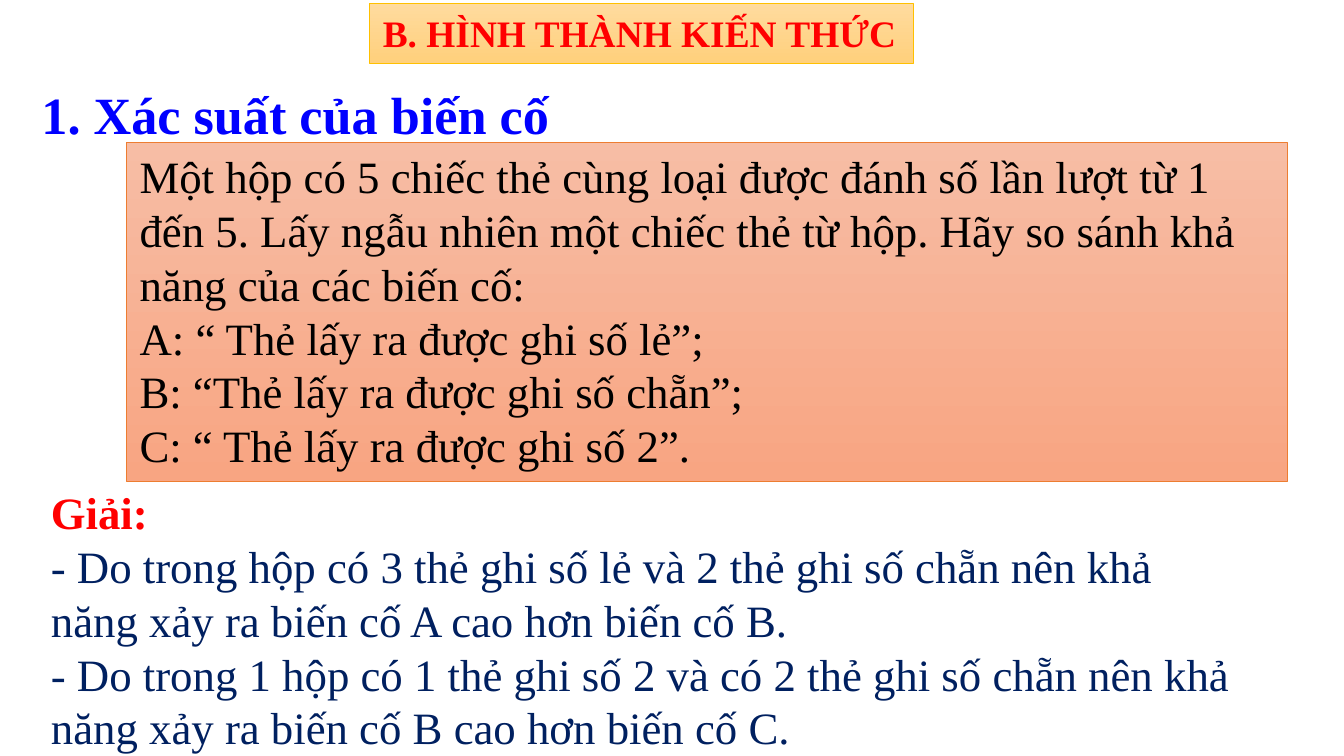
from dataclasses import dataclass
from typing import Any, Optional

from pptx import Presentation
from pptx.dml import color
from pptx.enum import shapes, text
from pptx import util as u

RED = color.RGBColor(0xFF, 0x00, 0x00)
BLUE = color.RGBColor(0x00, 0x00, 0xFF)
NAVY = color.RGBColor(0x00, 0x20, 0x60)
BLACK = color.RGBColor(0x00, 0x00, 0x00)
GOLD = color.RGBColor(0xFF, 0xC0, 0x00)
GOLD_TOP = color.RGBColor(0xFF, 0xDB, 0x9E)
GOLD_BOTTOM = color.RGBColor(0xFF, 0xD0, 0x7C)
ORANGE = color.RGBColor(0xED, 0x7D, 0x31)
ORANGE_TOP = color.RGBColor(0xF7, 0xBD, 0xA5)
ORANGE_BOTTOM = color.RGBColor(0xF8, 0xA5, 0x82)
FONT = "Times New Roman"
PAGE_WIDTH = u.Inches(10)
PAGE_HEIGHT = u.Emu(PAGE_WIDTH * 9 // 16)


@dataclass(frozen=True)
class Line:
    words: str
    ink: color.RGBColor
    bold: bool = False


@dataclass(frozen=True)
class Panel:
    top: color.RGBColor
    bottom: color.RGBColor
    border: color.RGBColor


@dataclass(frozen=True)
class Block:
    left: float
    top: float
    width: float
    height: float
    size: int
    lines: tuple[Line, ...]
    panel: Optional[Panel] = None
    wrap: bool = True
    align: text.PP_ALIGN = text.PP_ALIGN.LEFT


BLOCKS = (
    Block(2.75, 0.03, 4.05, 0.44, 20,
          (Line("B. HÌNH THÀNH KIẾN THỨC", RED, True),),
          Panel(GOLD_TOP, GOLD_BOTTOM, GOLD), wrap=False),
    Block(0.21, 0.56, 9.58, 0.57, 28,
          (Line("1. Xác suất của biến cố", BLUE, True),),
          align=text.PP_ALIGN.JUSTIFY),
    Block(0.28, 3.56, 8.98, 2.12, 24, (
        Line("Giải:", RED, True),
        Line("- Do trong hộp có 3 thẻ ghi số lẻ và 2 thẻ ghi số chẵn nên khả "
             "năng xảy ra biến cố A cao hơn biến cố B.", NAVY),
        Line("- Do trong 1 hộp có 1 thẻ ghi số 2 và có 2 thẻ ghi số chẵn nên khả "
             "năng xảy ra biến cố B cao hơn biến cố C.", NAVY),
    )),
    Block(0.94, 1.06, 8.64, 2.52, 24, (
        Line("Một hộp có 5 chiếc thẻ cùng loại được đánh số lần lượt từ 1 đến 5. "
             "Lấy ngẫu nhiên một chiếc thẻ từ hộp. Hãy so sánh khả năng của các "
             "biến cố:", BLACK),
        Line("A: “ Thẻ lấy ra được ghi số lẻ”;", BLACK),
        Line("B: “Thẻ lấy ra được ghi số chẵn”;", BLACK),
        Line("C: “ Thẻ lấy ra được ghi số 2”.", BLACK),
    ), Panel(ORANGE_TOP, ORANGE_BOTTOM, ORANGE)),
)


def set_format(target: Any, values: dict[str, Any]) -> None:
    for name, value in values.items():
        setattr(target, name, value)


def paint_panel(box: Any, panel: Panel) -> None:
    box.shadow.inherit = False
    box.fill.gradient()
    box.fill.gradient_angle = 270
    for stop, tint, position in zip(
            box.fill.gradient_stops, (panel.top, panel.bottom), (0, 1)):
        stop.color.rgb = tint
        stop.position = position
    box.line.color.rgb = panel.border
    box.line.width = u.Pt(0.5)


def write_lines(frame: Any, block: Block) -> None:
    set_format(frame, {
        "word_wrap": block.wrap,
        "auto_size": text.MSO_AUTO_SIZE.SHAPE_TO_FIT_TEXT,
        "vertical_anchor": text.MSO_ANCHOR.TOP,
    })
    for index, line in enumerate(block.lines):
        para = frame.add_paragraph() if index else frame.paragraphs[0]
        para.alignment = block.align
        span = para.add_run()
        span.text = line.words
        set_format(span.font, {
            "name": FONT, "size": u.Pt(block.size), "bold": line.bold,
        })
        span.font.color.rgb = line.ink


def draw_block(page: Any, block: Block) -> None:
    bounds = [u.Inches(value) for value in
              (block.left, block.top, block.width, block.height)]
    if block.panel:
        box = page.shapes.add_shape(shapes.MSO_SHAPE.RECTANGLE, *bounds)
        paint_panel(box, block.panel)
    else:
        box = page.shapes.add_textbox(*bounds)
    write_lines(box.text_frame, block)


def main() -> None:
    deck = Presentation()
    set_format(deck, {"slide_width": PAGE_WIDTH, "slide_height": PAGE_HEIGHT})
    page = deck.slides.add_slide(deck.slide_layouts[6])
    for block in BLOCKS:
        draw_block(page, block)
    deck.save("out.pptx")


if __name__ == "__main__":
    main()
